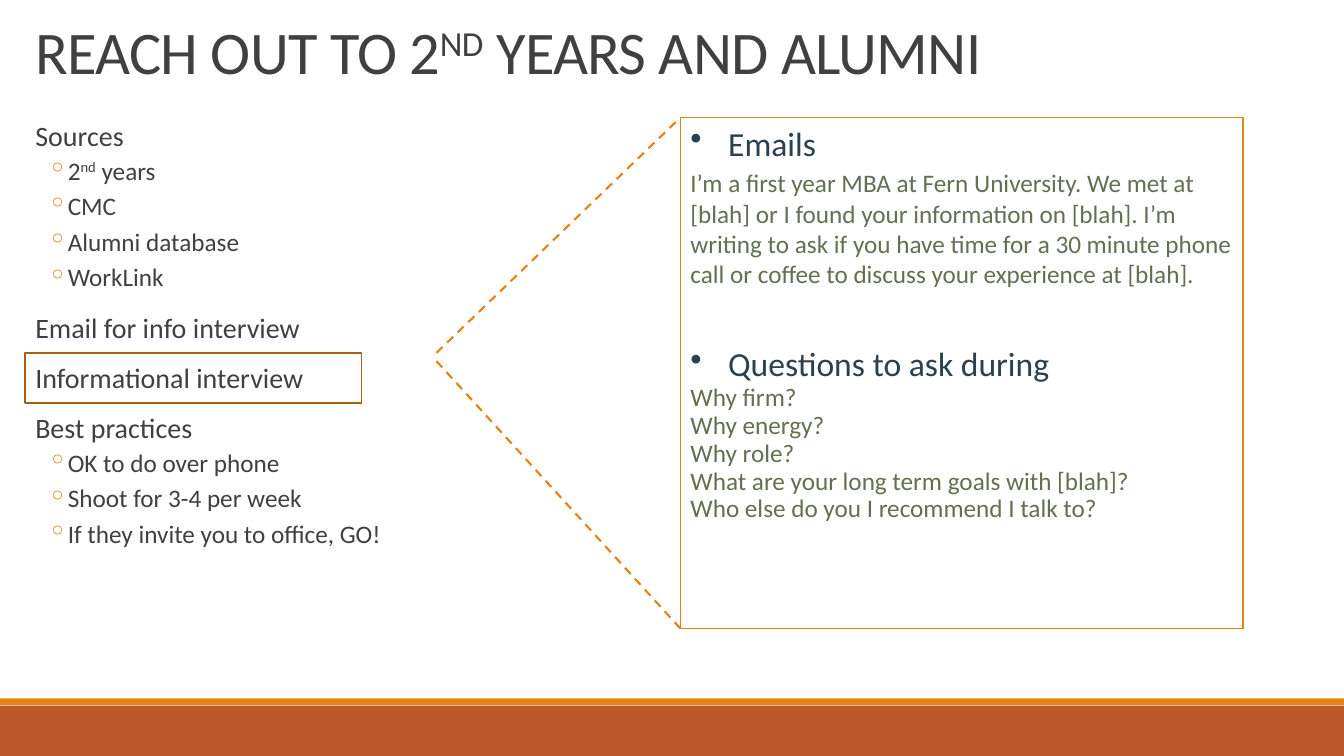
from dataclasses import dataclass
from typing import Optional

from lxml.etree import SubElement
from pptx import Presentation
from pptx.dml.color import RGBColor
from pptx.enum.dml import MSO_LINE_DASH_STYLE as Dash
from pptx.enum.shapes import MSO_CONNECTOR_TYPE as Connector, MSO_SHAPE as Shape
from pptx.enum.text import MSO_ANCHOR as Anchor, PP_ALIGN as Align
from pptx.oxml.ns import qn
from pptx.util import Cm, Pt

WHITE = RGBColor(0xFF, 0xFF, 0xFF)
ORANGE = RGBColor(0xE4, 0x83, 0x12)
BROWN = RGBColor(0xA9, 0x61, 0x0D)
RUST = RGBColor(0xBD, 0x58, 0x2C)
GREY = RGBColor(0x40, 0x40, 0x40)
NAVY = RGBColor(0x2C, 0x41, 0x4D)
OLIVE = RGBColor(0x63, 0x70, 0x52)


@dataclass
class TextStyle:
    size: float
    color: RGBColor
    line_spacing: float = 1.0
    before: float = 0
    after: float = 0
    margin: float = 0
    hanging: float = 0
    bullet: str = ""
    bullet_color: Optional[RGBColor] = None
    tracking: float = 0


TITLE = TextStyle(43.2, GREY, line_spacing=0.85, tracking=-0.5)
TOPIC = TextStyle(20, GREY, 0.9, before=12, after=2, margin=0.25)
DETAIL = TextStyle(18, GREY, 0.9, before=2, after=4, margin=1.07,
                   hanging=0.51, bullet="◦", bullet_color=ORANGE)
HEADING = TextStyle(24, NAVY, before=4.8, margin=0.95, hanging=0.95, bullet="•")
LATER_HEADING = TextStyle(24, NAVY, before=39, margin=0.95, hanging=0.95, bullet="•")
MESSAGE = TextStyle(18, OLIVE, before=3.6)
QUESTION = TextStyle(18, OLIVE, 0.75, before=3.6)

OUTLINE = [
    (TOPIC, ["Sources"]),
    (DETAIL, ["2^nd^ years", "CMC", "Alumni database", "WorkLink"]),
    (TOPIC, ["Email for info interview", "Informational interview", "Best practices"]),
    (DETAIL, ["OK to do over phone", "Shoot for 3-4 per week",
              "If they invite you to office, GO!"]),
]
SCRIPT = [
    (HEADING, ["Emails"]),
    (MESSAGE, ["I’m a first year MBA at Fern University. We met at [blah] or I found "
               "your information on [blah]. I’m writing to ask if you have time for a "
               "30 minute phone call or coffee to discuss your experience at [blah]."]),
    (LATER_HEADING, ["Questions to ask during"]),
    (QUESTION, ["Why firm?", "Why energy?", "Why role?",
                "What are your long term goals with [blah]?",
                "Who else do you I recommend I talk to?"]),
]

SLIDE_WIDTH, SLIDE_HEIGHT = 33.87, 19.05
LEFT, CONTENT_TOP = 0.64, 2.96
PANEL_LEFT, PANEL_WIDTH, PANEL_HEIGHT = 17.15, 14.18, 12.88


class SlideBuilder:
    font_name = "Calibri"

    def __init__(self, slide):
        self.slide = slide

    def rectangle(self, left, top, width, height, fill=None, line=None):
        shape = self.slide.shapes.add_shape(
            Shape.RECTANGLE, Cm(left), Cm(top), Cm(width), Cm(height))
        shape.shadow.inherit = False
        if fill is None:
            shape.fill.background()
        else:
            shape.fill.solid()
            shape.fill.fore_color.rgb = fill
        if line is None:
            shape.line.fill.background()
        else:
            shape.line.color.rgb = line
            shape.line.width = Pt(1.25)
        return shape

    def text_box(self, left, top, width, height, groups, anchor=Anchor.TOP, side_inset=0.25):
        box = self.slide.shapes.add_textbox(Cm(left), Cm(top), Cm(width), Cm(height))
        box.text_frame.margin_left = box.text_frame.margin_right = Cm(side_inset)
        self.fill_text(box.text_frame, groups, anchor)

    def fill_text(self, frame, groups, anchor=Anchor.TOP):
        """Fill a text frame with (style, texts) groups, one paragraph a text."""
        frame.word_wrap = True
        frame.vertical_anchor = anchor
        lines = [(style, text) for style, texts in groups for text in texts]
        for index, (style, text) in enumerate(lines):
            paragraph = frame.add_paragraph() if index else frame.paragraphs[0]
            self.format_paragraph(paragraph, style)
            self.add_runs(paragraph, text, style.tracking)

    def format_paragraph(self, paragraph, style):
        paragraph.alignment = Align.LEFT
        paragraph.line_spacing = style.line_spacing
        paragraph.space_before = Pt(style.before)
        paragraph.space_after = Pt(style.after)
        properties = paragraph._p.get_or_add_pPr()
        properties.set("marL", str(Cm(style.margin)))
        properties.set("indent", str(-Cm(style.hanging)))
        if style.bullet_color is not None:
            color = SubElement(properties, qn("a:buClr"))
            SubElement(color, qn("a:srgbClr"), val=str(style.bullet_color))
        if style.bullet:
            SubElement(properties, qn("a:buChar"), char=style.bullet)
        font = paragraph.font
        font.name = self.font_name
        font.size = Pt(style.size)
        font.color.rgb = style.color

    def add_runs(self, paragraph, text, tracking):
        """Add the text as runs; a part between two carets is superscript."""
        for index, part in enumerate(text.split("^")):
            run = paragraph.add_run()
            run.text = part
            properties = run._r.get_or_add_rPr()
            if index % 2:
                properties.set("baseline", "30000")
            if tracking:
                properties.set("spc", str(round(tracking * 100)))

    def dashed_line(self, start, end):
        connector = self.slide.shapes.add_connector(
            Connector.STRAIGHT, *(Cm(value) for value in (*start, *end)))
        connector.line.color.rgb = ORANGE
        connector.line.width = Pt(1.5)
        connector.line.dash_style = Dash.DASH
        SubElement(connector._element.spPr, qn("a:effectLst"))


def main():
    presentation = Presentation()
    presentation.slide_width = Cm(SLIDE_WIDTH)
    presentation.slide_height = Cm(SLIDE_HEIGHT)
    builder = SlideBuilder(presentation.slides.add_slide(presentation.slide_layouts[6]))

    builder.rectangle(0, 17.78, SLIDE_WIDTH, 1.27, fill=RUST)
    builder.rectangle(0, 17.6, SLIDE_WIDTH, 0.17, fill=ORANGE)

    builder.text_box(LEFT, 0.42, 29.9, 1.9,
                     [(TITLE, ["REACH OUT TO 2^ND^ YEARS AND ALUMNI"])], Anchor.BOTTOM)
    builder.text_box(LEFT, CONTENT_TOP, PANEL_WIDTH, PANEL_HEIGHT, OUTLINE, side_inset=0)

    panel = builder.rectangle(PANEL_LEFT, CONTENT_TOP, PANEL_WIDTH, PANEL_HEIGHT,
                              fill=WHITE, line=ORANGE)
    builder.fill_text(panel.text_frame, SCRIPT)

    builder.rectangle(LEFT, 8.89, 8.47, 1.27, line=BROWN)
    builder.dashed_line((11, 8.89), (PANEL_LEFT, CONTENT_TOP))
    builder.dashed_line((11, 9.1), (PANEL_LEFT, CONTENT_TOP + PANEL_HEIGHT))

    presentation.save("out.pptx")


if __name__ == "__main__":
    main()
